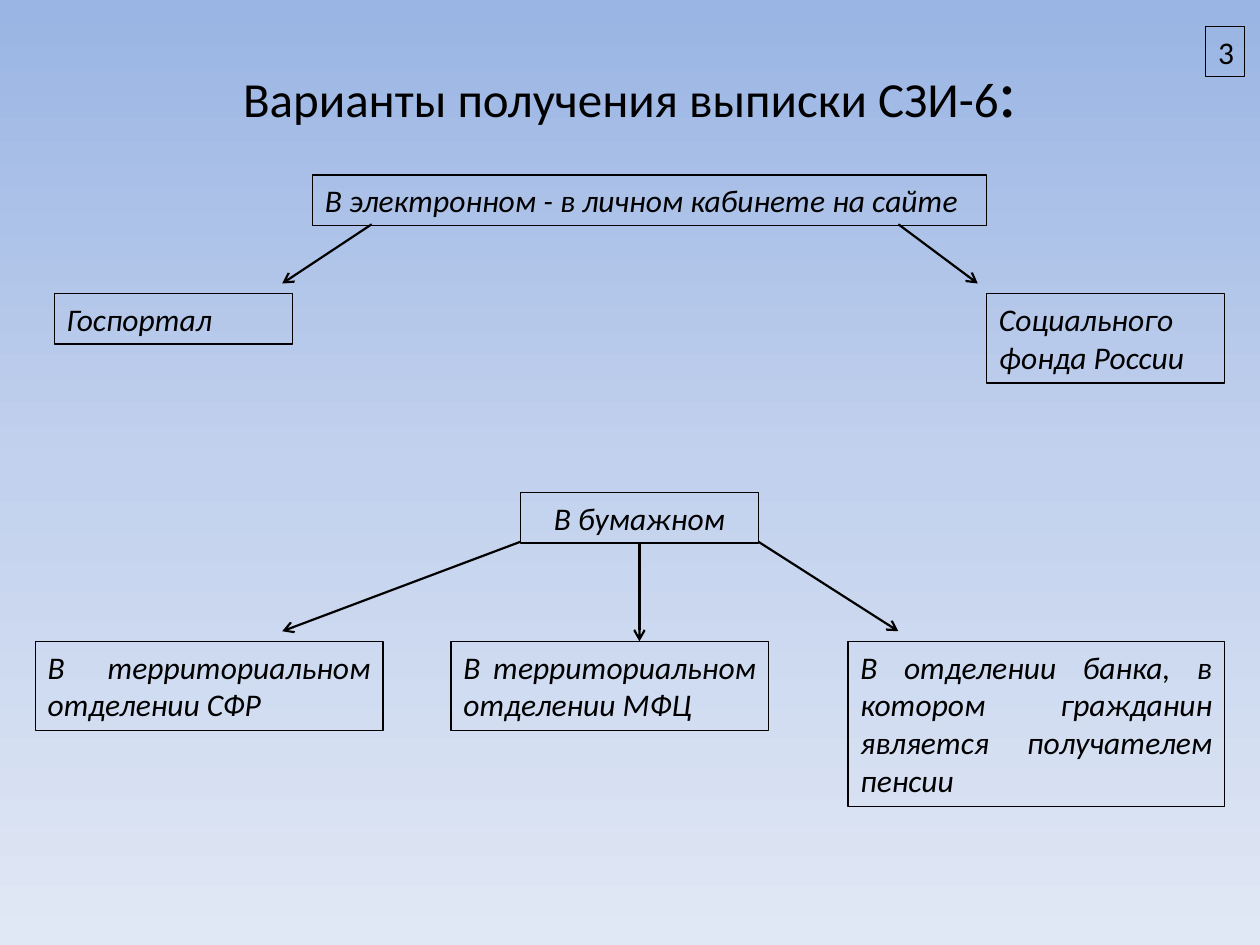
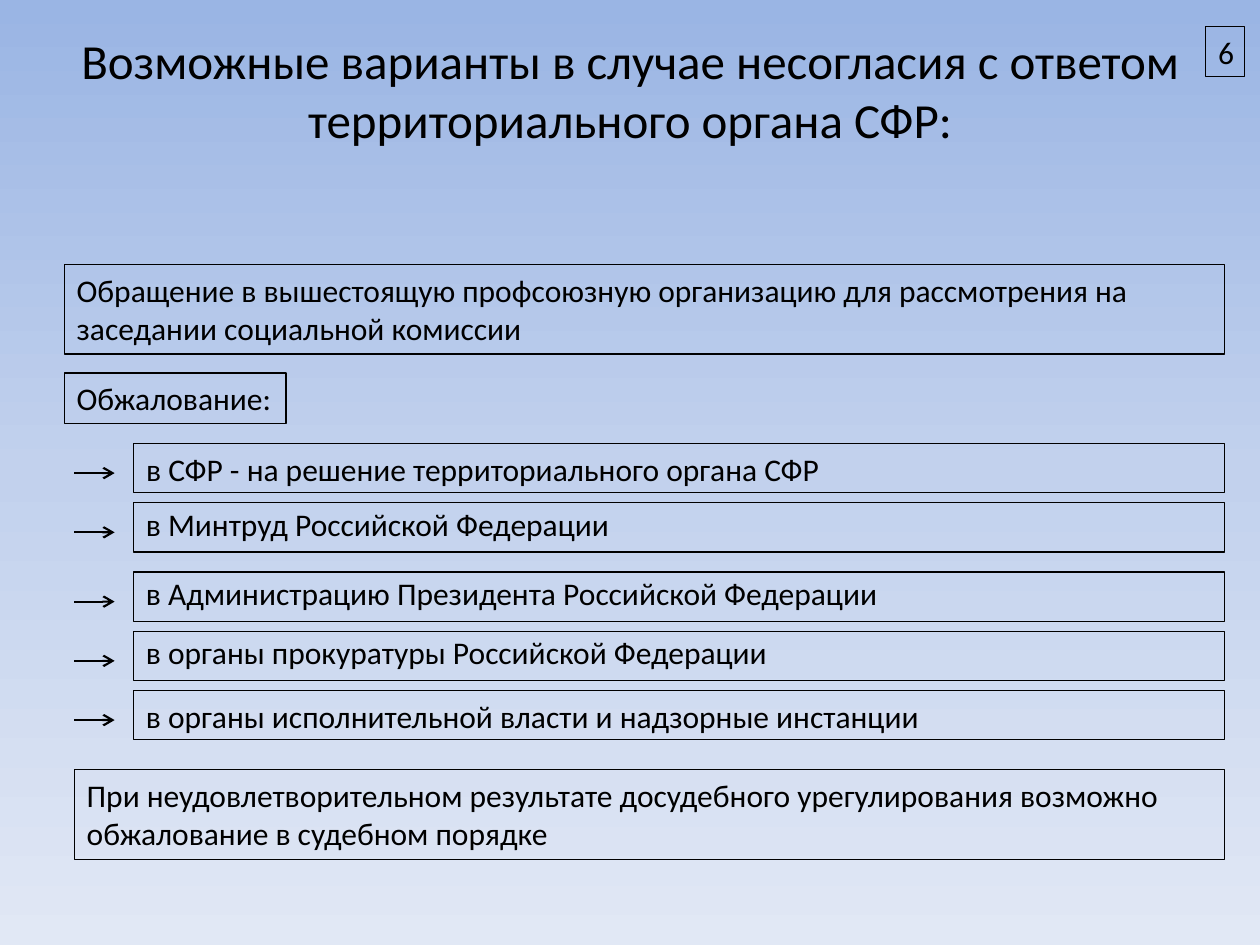
from copy import deepcopy

from lxml.etree import SubElement
from pptx import Presentation
from pptx.dml.color import RGBColor
from pptx.enum.shapes import MSO_CONNECTOR as Connector, MSO_SHAPE as Shape
from pptx.enum.text import MSO_ANCHOR as Anchor, MSO_AUTO_SIZE as AutoSize, PP_ALIGN as Align
from pptx.oxml.ns import qn
from pptx.util import Inches, Pt

COLUMNS, ROWS = 100, 75
TITLE_ONLY, TITLE_AND_BODY = 5, 1
BOTTOM_SIDE = 2
RIGHT_EDGE = 97.2
ONE_LINE, TWO_LINES, FOUR_LINES = 4, 7.1, 13.1


def color(hex_text):
    return RGBColor.from_string(hex_text)


def write_text(frame, *runs, size=18, italic=False, align=Align.LEFT, before=0,
               line_spacing=None, hanging=0):
    """Fill the frame's paragraph; a run is a text or a (text, size) pair."""
    paragraph = frame.paragraphs[0]
    paragraph.alignment = align
    paragraph.line_spacing = line_spacing
    paragraph.space_before = Pt(before)
    properties = paragraph._p.get_or_add_pPr()
    properties.set("marL", str(Inches(hanging)))
    properties.set("indent", str(-Inches(hanging)))
    SubElement(properties, qn("a:buNone"))
    for item in runs:
        text, run_size = item if isinstance(item, tuple) else (item, size)
        run = paragraph.add_run()
        run.text = text
        run.font.name = Deck.font
        run.font.size = Pt(run_size)
        run.font.italic = italic
        run.font.color.rgb = color(Deck.ink)


class Deck:
    font = "Calibri"
    ink = "000000"
    gradient = ((0, "9AB5E4"), (0.5, "C2D1ED"), (1, "E1E8F5"))

    def __init__(self):
        self.presentation = Presentation()
        self.presentation.slide_width = Inches(10)
        self.presentation.slide_height = Inches(7.5)
        self.slide = None
        self.paint_background()

    def paint_background(self):
        master = self.presentation.slide_master
        fill = master.background.fill
        fill.gradient()
        fill.gradient_angle = 270
        stop_list = master.element.find(".//" + qn("a:gsLst"))
        stop_list.insert(1, deepcopy(stop_list[0]))
        for stop, (position, shade) in zip(fill.gradient_stops, self.gradient):
            stop.position = position
            stop.color.rgb = color(shade)

    def x(self, columns):
        return round(self.presentation.slide_width * columns / COLUMNS)

    def y(self, rows):
        return round(self.presentation.slide_height * rows / ROWS)

    def place(self, shape, left, top, width, height):
        shape.left, shape.top = self.x(left), self.y(top)
        shape.width, shape.height = self.x(width), self.y(height)

    def add_slide(self, layout, number):
        layouts = self.presentation.slide_layouts
        self.slide = self.presentation.slides.add_slide(layouts[layout])
        self.box(number, 95.7, 2.1, 3.1, ONE_LINE)

    def title(self, *runs, top, inset=0):
        title = self.slide.shapes.title
        self.place(title, 5, top, 90, 12.5)
        frame = title.text_frame
        frame.auto_size = AutoSize.NONE
        frame.vertical_anchor = Anchor.TOP
        frame.margin_top = self.y(inset)
        write_text(frame, *runs, size=28, align=Align.CENTER)

    def box(self, text, left, top, width, height, shape=None, grow=True, wrap=True, **text_format):
        """Draw an outlined text box, or turn the given placeholder into one."""
        if shape is None:
            shape = self.slide.shapes.add_shape(Shape.RECTANGLE, 0, 0, 0, 0)
            shape.shadow.inherit = False
        self.place(shape, left, top, width, height)
        shape.fill.background()
        shape.line.color.rgb = color(self.ink)
        shape.line.width = Pt(0.75)
        frame = shape.text_frame
        frame.word_wrap = wrap
        frame.auto_size = AutoSize.SHAPE_TO_FIT_TEXT if grow else AutoSize.NONE
        frame.vertical_anchor = Anchor.TOP
        write_text(frame, text, **text_format)
        return shape

    def arrow(self, start, end, source=None):
        line = self.slide.shapes.add_connector(
            Connector.STRAIGHT, self.x(start[0]), self.y(start[1]), self.x(end[0]), self.y(end[1]))
        if source is not None:
            line.begin_connect(source, BOTTOM_SIDE)
        line.line.color.rgb = color(self.ink)
        line.line.width = Pt(1.25)
        SubElement(line.line._get_or_add_ln(), qn("a:tailEnd"), type="arrow")
        SubElement(line._element.spPr, qn("a:effectLst"))


def add_statement_slide(deck):
    deck.add_slide(TITLE_ONLY, "3")
    deck.title("Варианты получения выписки СЗИ-6", (":", 39.6), top=0.5, inset=3.3)

    def option(text, left, top, width, height, align=Align.JUSTIFY):
        return deck.box(text, left, top, width, height, italic=True, align=align, before=3.6)

    option("В электронном - в личном кабинете на сайте", 24.8, 13.9, 53.5, ONE_LINE)
    option("Госпортал", 4.3, 23.3, 18.9, ONE_LINE)
    option("Социального фонда России", 78.3, 23.3, 18.9, TWO_LINES)
    paper = option("В бумажном", 41.3, 39.1, 18.9, ONE_LINE, Align.CENTER)
    option("В территориальном отделении СФР", 2.8, 50.9, 27.6, TWO_LINES)
    option("В территориальном отделении МФЦ", 35.8, 50.9, 25.2, TWO_LINES)
    option("В отделении банка, в котором гражданин является получателем пенсии",
           67.3, 50.9, 29.9, FOUR_LINES)

    deck.arrow((71.3, 17.8), (77.6, 22.5))
    deck.arrow((29.5, 17.8), (22.4, 22.5))
    deck.arrow((41.3, 43), (22.4, 50.1))
    deck.arrow((50.75, 43.1), (50.75, 50.9), source=paper)
    deck.arrow((60.2, 43), (71.3, 50.1))


def add_appeal_slide(deck):
    deck.add_slide(TITLE_AND_BODY, "6")
    deck.title("Возможные варианты в случае несогласия с ответом территориального органа СФР:", top=2.4)
    deck.box("Обращение в вышестоящую профсоюзную организацию для рассмотрения на "
             "заседании социальной комиссии", 5.1, 21, RIGHT_EDGE - 5.1, TWO_LINES)
    deck.box("Обжалование:", 5.1, 29.6, 17.6, ONE_LINE, wrap=False)

    appeals = (
        ("в СФР - на решение территориального органа СФР", None),
        ("в Минтруд Российской Федерации", 0.9),
        ("в Администрацию Президента Российской Федерации", 0.9),
        ("в органы прокуратуры Российской Федерации", 0.9),
        ("в органы исполнительной власти и надзорные инстанции", None),
    )
    first_top, step, group_gap, left = 35.2, 4.7, 0.8, 10.6
    for index, (text, line_spacing) in enumerate(appeals):
        top = first_top + step * index + (group_gap if index >= 2 else 0)
        body = deck.slide.placeholders[1] if index == 0 else None
        deck.box(text, left, top, RIGHT_EDGE - left, 3.9, shape=body, grow=False,
                 before=3.6, line_spacing=line_spacing, hanging=0.38)
        deck.arrow((5.9, top + 2.35), (9.1, top + 2.35))

    deck.box("При неудовлетворительном результате досудебного урегулирования возможно "
             "обжалование в судебном порядке", 5.9, 61.1, RIGHT_EDGE - 5.9, TWO_LINES)


def main():
    deck = Deck()
    add_statement_slide(deck)
    add_appeal_slide(deck)
    deck.presentation.save("out.pptx")


if __name__ == "__main__":
    main()
